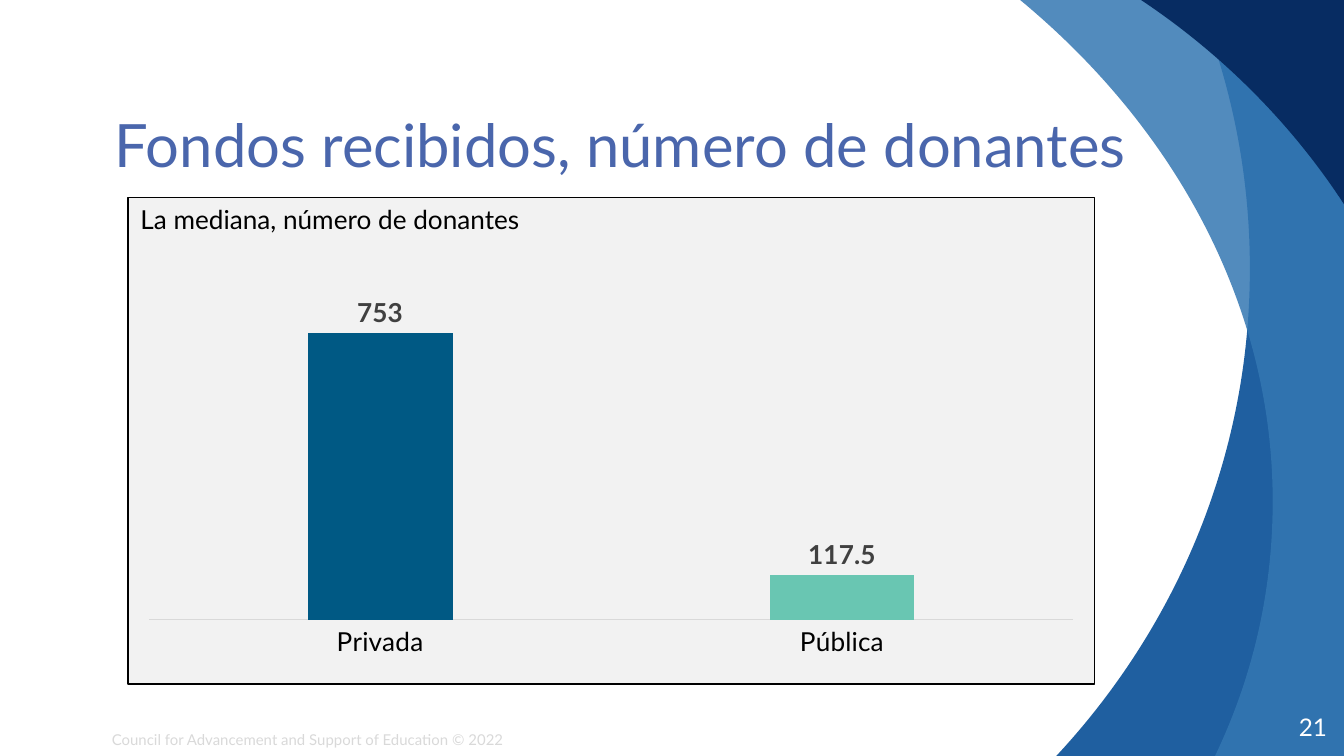
from lxml.etree import SubElement
from pptx import Presentation
from pptx.chart.data import CategoryChartData
from pptx.dml.color import RGBColor
from pptx.enum.chart import XL_CHART_TYPE, XL_LABEL_POSITION, XL_TICK_MARK
from pptx.enum.text import MSO_ANCHOR, PP_ALIGN
from pptx.oxml import parse_xml
from pptx.oxml.ns import nsdecls, qn
from pptx.util import Pt

FONT = "Lato"
HUES = {
    "title": "4A66AC", "foot": "D9D9D9", "white": "FFFFFF", "ink": "000000",
    "label": "404040", "panel": "F2F2F2", "axis": "D9D9D9",
    "deep": "1F5FA0", "mid": "3477B2", "navy": "072C62",
    "private": "005984", "public": "69C6B2",
}


def hue(name):
    return RGBColor.from_string(HUES[name])


def style(font, size, color, bold=False):
    font.name = FONT
    font.size = Pt(size)
    font.bold = bold
    font.color.rgb = hue(color)


def add_text(slide, box, text, size, color, inset=(0, 0),
             anchor=MSO_ANCHOR.TOP, align=PP_ALIGN.LEFT, wrap=True):
    frame = slide.shapes.add_textbox(*map(Pt, box)).text_frame
    frame.text = text
    frame.word_wrap = wrap
    frame.vertical_anchor = anchor
    frame.margin_left = frame.margin_right = Pt(inset[0])
    frame.margin_top = frame.margin_bottom = Pt(inset[1])
    line = frame.paragraphs[0]
    line.alignment = align
    style(line.runs[0].font, size, color)
    return line


def bend(shape, count):
    track = shape.element.find(".//" + qn("a:path"))
    lines = track.findall(qn("a:lnTo"))
    for i in range(0, count, 3):
        arc = SubElement(track, qn("a:cubicBezTo"))
        lines[i].addprevious(arc)
        for line in lines[i:i + 3]:
            arc.append(line[0])
            track.remove(line)


def add_band(slide, box, nodes, color, alpha=None):
    left, top, width, height = box
    points = list(nodes)
    if nodes[-1] != (width, height):
        points.append((width, height))
    points.append((width, 0))
    spots = [(Pt(left + x), Pt(top + y)) for x, y in points]
    pen = slide.shapes.build_freeform(*spots[0])
    pen.add_line_segments(spots[1:], close=True)
    band = pen.convert_to_shape()
    bend(band, len(nodes) - 1)
    band.shadow.inherit = False
    band.fill.solid()
    band.fill.fore_color.rgb = hue(color)
    band.line.fill.background()
    if alpha:
        tint = band.fill._xPr.find(".//" + qn("a:srgbClr"))
        SubElement(tint, qn("a:alpha"), val=str(alpha * 1000))


def add_swoosh(slide, box):
    left, top, width, height = box
    add_band(slide, box, [
        (95, 0), (113.7, 46.1), (123.1, 94.3), (123.1, 144),
        (123.1, 244.8), (83.5, 336.2), (19.4, height)], "deep")
    add_band(slide, box, [
        (0, 0), (83.5, 69.1), (135.3, 164.2), (135.3, 268.6),
        (135.3, 315.4), (125.3, 361.4), (104.4, height)], "mid", 85)
    add_band(slide, (left, top, width, 109.4), [
        (64.8, 0), (108, 28.8), (145.4, 66.2), (width, 109.4)], "navy")


def add_panel(chart):
    chart._chartSpace.chart.addnext(parse_xml(
        f'<c:spPr {nsdecls("c", "a")}>'
        f'<a:solidFill><a:srgbClr val="{HUES["panel"]}"/></a:solidFill>'
        f'<a:ln w="{Pt(0.75)}"><a:solidFill><a:srgbClr val="{HUES["ink"]}"/>'
        '</a:solidFill></a:ln></c:spPr>'))


def set_plot(chart, shares):
    area = chart._chartSpace.chart.plotArea
    for old in area.findall(qn("c:layout")):
        area.remove(old)
    layout = SubElement(area, qn("c:layout"))
    area.insert(0, layout)
    manual = SubElement(layout, qn("c:manualLayout"))
    pairs = [("layoutTarget", "inner"), ("xMode", "edge"), ("yMode", "edge")]
    pairs += [(key, share / 100) for key, share in zip("xywh", shares)]
    for key, value in pairs:
        SubElement(manual, qn("c:" + key), val=str(value))


def add_graph(slide, box):
    data = CategoryChartData()
    data.categories = ["Privada", "Pública"]
    data.add_series("Series 1", [753, 117.5])
    chart = slide.shapes.add_chart(
        XL_CHART_TYPE.COLUMN_CLUSTERED, *map(Pt, box), data).chart
    chart.has_title = False
    chart.has_legend = False
    style(chart.font, 10, "ink")
    add_panel(chart)
    set_plot(chart, (2.2, 24.2, 95.6, 62.6))

    scale = chart.value_axis
    scale.minimum_scale, scale.maximum_scale = 0, 800
    scale.has_major_gridlines = False
    scale.visible = False
    base = chart.category_axis
    base.major_tick_mark = base.minor_tick_mark = XL_TICK_MARK.NONE
    base.format.line.color.rgb = hue("axis")
    base.format.line.width = Pt(0.75)
    style(base.tick_labels.font, 14, "ink")

    plot = chart.plots[0]
    plot.gap_width, plot.overlap = 219, -27
    plot.vary_by_categories = False
    bars = plot.series[0]
    bars.format.fill.solid()
    bars.format.fill.fore_color.rgb = hue("private")
    fill = bars.points[1].format.fill
    fill.solid()
    fill.fore_color.rgb = hue("public")
    for i in range(2):
        label = bars.points[i].data_label
        style(label.font, 14, "label", True)
        label.position = XL_LABEL_POSITION.OUTSIDE_END

    left, top = box[:2]
    add_text(slide, (left, top, 225.4, 24.5), "La mediana, número de donantes",
             14, "ink", (7.2, 3.6), wrap=False)


def add_title(slide, box):
    line = add_text(slide, box, "Fondos recibidos, número de donantes",
                    32, "title", anchor=MSO_ANCHOR.BOTTOM)
    line.line_spacing = 0.9


def add_foot(slide, box):
    left, top, width, height = box
    add_text(slide, (left, top + 14.4, 360, 17),
             "Council for Advancement and Support of Education © 2022",
             8, "foot", (7.2, 3.6))
    add_text(slide, (left + width - 43.2, top, 43.2, height), "21", 13, "white",
             anchor=MSO_ANCHOR.MIDDLE, align=PP_ALIGN.RIGHT)


def main():
    deck = Presentation()
    deck.slide_width, deck.slide_height = Pt(720), Pt(405)
    slide = deck.slides.add_slide(deck.slide_layouts[6])
    add_swoosh(slide, (546.5, 0, 173.5, 405))
    add_title(slide, (61.4, 65.9, 548, 31))
    add_graph(slide, (68.2, 105.4, 518.4, 261.4))
    add_foot(slide, (52.8, 373.7, 658, 31))
    deck.save("out.pptx")


if __name__ == "__main__":
    main()
